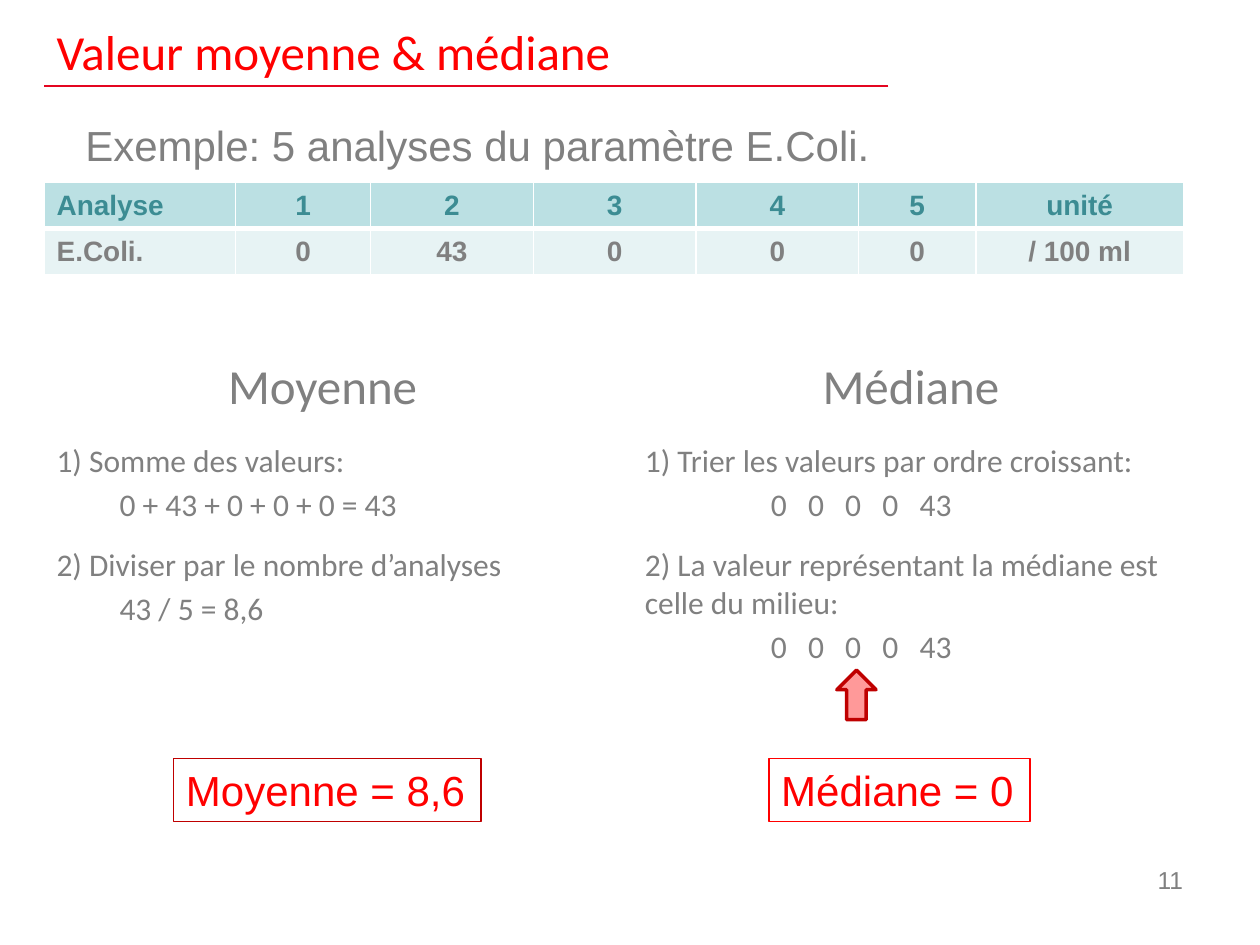
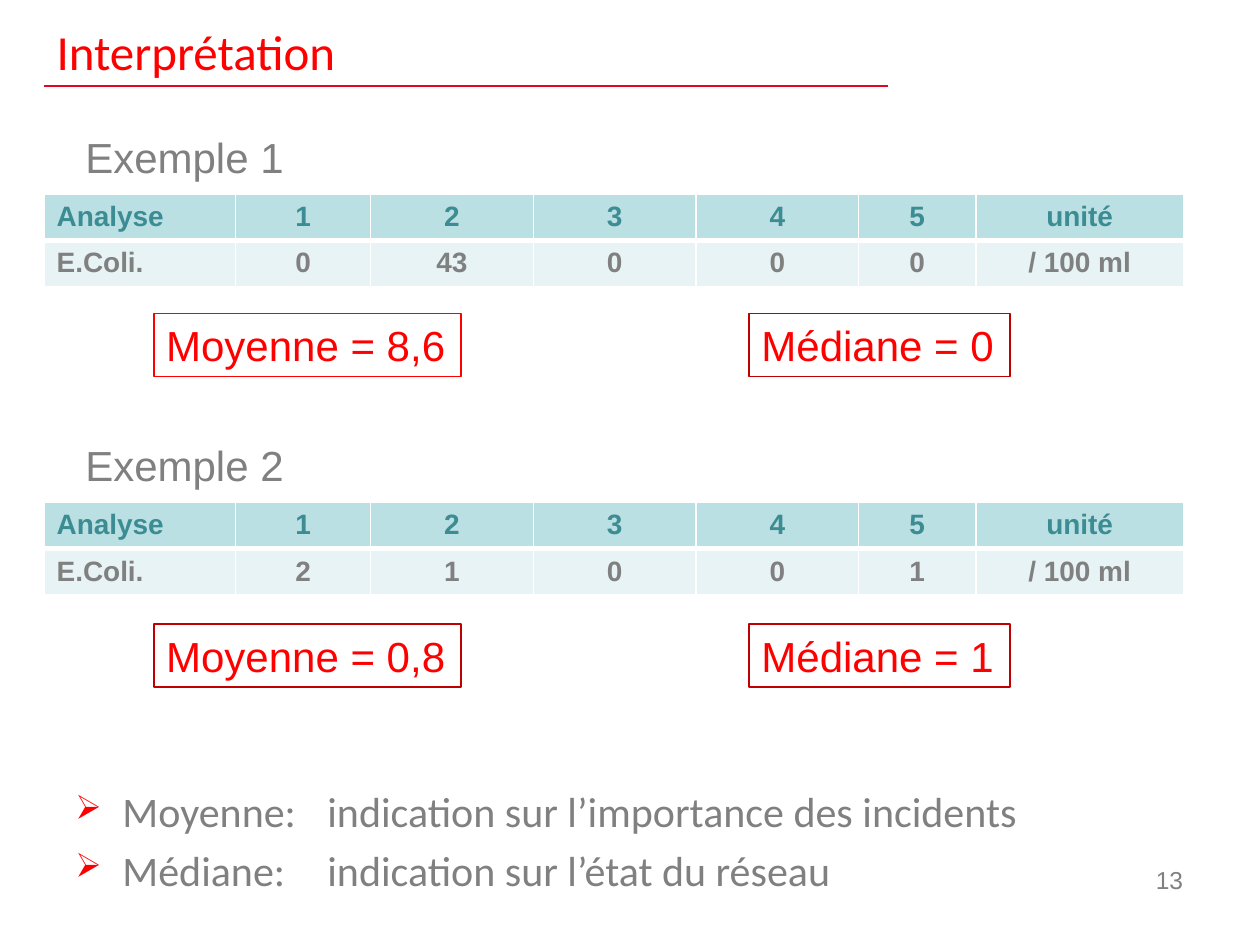
from lxml.etree import SubElement
from pptx import Presentation
from pptx.dml.color import RGBColor
from pptx.enum.shapes import MSO_CONNECTOR, MSO_SHAPE
from pptx.enum.text import MSO_ANCHOR, MSO_AUTO_SIZE, PP_ALIGN
from pptx.oxml.ns import qn
from pptx.util import Cm, Pt

RED, DARK, PINK, RULE = "FF0000", "BF0000", "FF9999", "E40520"
GREY, TEAL, HEAD, BODY, WHITE = "808080", "3C8C93", "BBE0E3", "E7F3F4", "FFFFFF"

# Text formats: size and font, then any further font attributes
TITLE = {"size": Pt(28), "name": "Calibri"}
TEXT = {"size": Pt(18), "name": "Calibri"}
POINT = {"size": Pt(24), "name": "Calibri"}
LABEL = {"size": Pt(24), "name": "Arial"}
CELL = {"size": Pt(16), "name": "Arial", "bold": True}
PAGE = {"size": Pt(14), "name": "Arial"}

LEFT, RIGHT = 0.89, 12.75  # the two text columns
WIDTHS = [3.86, 2.72, 3.28, 3.28, 3.28, 2.36, 4.19]
NAMES = ["Analyse", "1", "2", "3", "4", "5", "unité"]
SORTED = "\t" + "\t".join(["0", "0", "0", "0", "43"])
STOPS = [2.54 + 0.75 * i for i in range(5)]


def paint(hue):
    return RGBColor.from_string(hue)


def place(*box):
    return [Cm(v) for v in box]


class Deck:
    def __init__(self):
        self.prs = Presentation()
        self.prs.slide_width, self.prs.slide_height = Cm(25.4), Cm(19.05)
        self.shapes = None

    # Shared frame: red rule, title and page number
    def start(self, title, page):
        slide = self.prs.slides.add_slide(self.prs.slide_layouts[6])
        self.shapes = slide.shapes
        rule = self.shapes.add_connector(MSO_CONNECTOR.STRAIGHT, *place(17.91, 1.73, 0.89, 1.73))
        rule.line.color.rgb = paint(RULE)
        rule.line.width = Pt(1.5)
        SubElement(rule._element.spPr, qn("a:effectLst"))
        self.text((LEFT, 0.33, 17, 1.4), [title], TITLE, RED, anchor=MSO_ANCHOR.MIDDLE)
        self.text((22.3, 17.32, 1.8, 1.4), [page], PAGE, align=PP_ALIGN.RIGHT)

    def style(self, para, look, hue):
        for key, value in look.items():
            setattr(para.font, key, value)
        para.font.color.rgb = paint(hue)

    def fill(self, frame, lines, look, hue=GREY, align=PP_ALIGN.LEFT,
             anchor=MSO_ANCHOR.TOP, wrap=True, stops=(), mark=None):
        frame.word_wrap = wrap
        frame.vertical_anchor = anchor
        if not wrap:
            frame.auto_size = MSO_AUTO_SIZE.SHAPE_TO_FIT_TEXT
        for i, line in enumerate(lines):
            para = frame.paragraphs[0] if i == 0 else frame.add_paragraph()
            para.text = line
            para.alignment = align
            if mark:
                self.bullet(para, mark)
            if stops:
                self.tabs(para, stops)
            if i:
                para.space_before = Pt(look["size"].pt * 0.2)
            self.style(para, look, hue)

    def text(self, box, lines, look, hue=GREY, **more):
        self.fill(self.shapes.add_textbox(*place(*box)).text_frame, lines, look, hue, **more)

    def bullet(self, para, mark):
        props = para._p.get_or_add_pPr()
        props.set("marL", str(Cm(0.95)))
        props.set("indent", str(-Cm(0.95)))
        tint = SubElement(props, qn("a:buClr"))
        SubElement(tint, qn("a:srgbClr"), val=RED)
        SubElement(props, qn("a:buSzPct"), val="80000")
        SubElement(props, qn("a:buChar"), char=mark)

    def tabs(self, para, stops):
        group = SubElement(para._p.get_or_add_pPr(), qn("a:tabLst"))
        for stop in stops:
            SubElement(group, qn("a:tab"), pos=str(Cm(stop)), algn="l")

    def shape(self, kind, box, edge, width, hue=None):
        item = self.shapes.add_shape(kind, *place(*box))
        item.shadow.inherit = False
        if hue:
            item.fill.solid()
            item.fill.fore_color.rgb = paint(hue)
        else:
            item.fill.background()
        item.line.color.rgb = paint(edge)
        item.line.width = Pt(width)
        return item

    # Pair of framed results, mean on the left and median on the right
    def results(self, left, top, mean, median, edges):
        pair = [(left, 6.2, f"Moyenne = {mean}"), (left + 12, 5.26, f"Médiane = {median}")]
        for (x, width, words), edge in zip(pair, edges):
            item = self.shape(MSO_SHAPE.RECTANGLE, (x, top, width, 1.27), edge, 1)
            self.fill(item.text_frame, [words], LABEL, RED, wrap=False)

    def border(self, cell, widths):
        props = cell._tc.get_or_add_tcPr()
        for side, width in zip("LRTB", widths):
            line = SubElement(props, qn(f"a:ln{side}"), w=str(Pt(width)))
            tint = SubElement(SubElement(line, qn("a:solidFill")), qn("a:srgbClr"))
            tint.set("val", WHITE)

    # Example label with its table of analyses below
    def sample(self, top, label, width, counts):
        self.text((1.47, top, width, 1.27), [label], LABEL, wrap=False)
        box = place(LEFT, top + 1.39, sum(WIDTHS), 1.86)
        table = self.shapes.add_table(2, len(WIDTHS), *box).table
        for col, size in zip(table.columns, WIDTHS):
            col.width = Cm(size)
        rows = [(NAMES, HEAD, TEAL, (1, 1, 1, 3)),
                (["E.Coli.", *counts, "/ 100 ml"], BODY, GREY, (1, 1, 3, 1))]
        for r, (words, back, hue, edges) in enumerate(rows):
            table.rows[r].height = Cm(0.93)
            for c, word in enumerate(words):
                cell = table.cell(r, c)
                self.border(cell, edges)
                cell.fill.solid()
                cell.fill.fore_color.rgb = paint(back)
                cell.vertical_anchor = MSO_ANCHOR.MIDDLE
                para = cell.text_frame.paragraphs[0]
                para.text = word
                para.alignment = PP_ALIGN.CENTER if c else PP_ALIGN.LEFT
                self.style(para, CELL, hue)

    # Column with a heading and two numbered steps
    def column(self, left, head, steps, stops=()):
        self.text((left, 7.05, 11.23, 1.8), [head], TITLE, align=PP_ALIGN.CENTER)
        for (top, height), step in zip([(8.76, 2.2), (10.87, 2.87)], steps):
            self.text((left, top, 11.23, height), step, TEXT, stops=stops)


def main():
    deck = Deck()

    # Mean and median
    deck.start("Valeur moyenne & médiane", "11")
    deck.sample(2.29, "Exemple: 5 analyses du paramètre E.Coli.", 16.48, ["0", "43", "0", "0", "0"])
    deck.column(LEFT, "Moyenne", [
        ["1) Somme des valeurs:", "\t0 + 43 + 0 + 0 + 0 = 43"],
        ["2) Diviser par le nombre d’analyses", "\t43 / 5 = 8,6"]])
    deck.column(RIGHT, "Médiane", [
        ["1) Trier les valeurs par ordre croissant:", SORTED],
        ["2) La valeur représentant la médiane est celle du milieu:", SORTED]], STOPS)
    deck.shape(MSO_SHAPE.UP_ARROW, (16.87, 13.51, 0.79, 1), DARK, 2, PINK)
    deck.results(3.5, 15.29, "8,6", "0", (DARK, RED))

    # Reading the two values
    deck.start("Interprétation", "13")
    deck.sample(2.52, "Exemple 1", 4.55, ["0", "43", "0", "0", "0"])
    deck.results(3.1, 6.32, "8,6", "0", (RED, DARK))
    deck.sample(8.73, "Exemple 2", 4.55, ["2", "1", "0", "0", "1"])
    deck.results(3.1, 12.58, "0,8", "1", (DARK, DARK))
    deck.text((1.27, 15.72, 22.86, 2.6), [
        "Moyenne:\tindication sur l’importance des incidents",
        "Médiane:\tindication sur l’état du réseau"], POINT, mark="➢")

    deck.prs.save("out.pptx")


if __name__ == "__main__":
    main()
